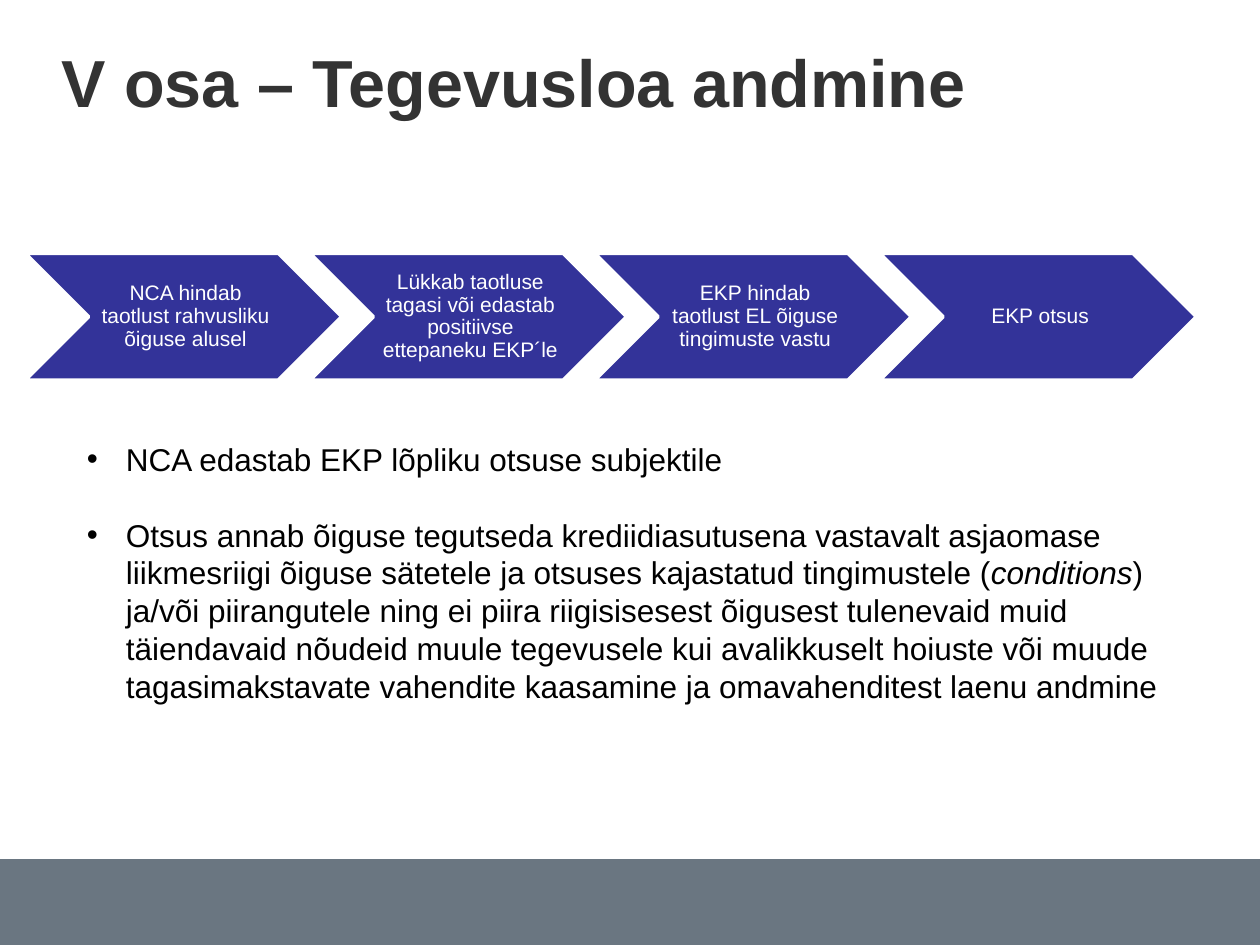
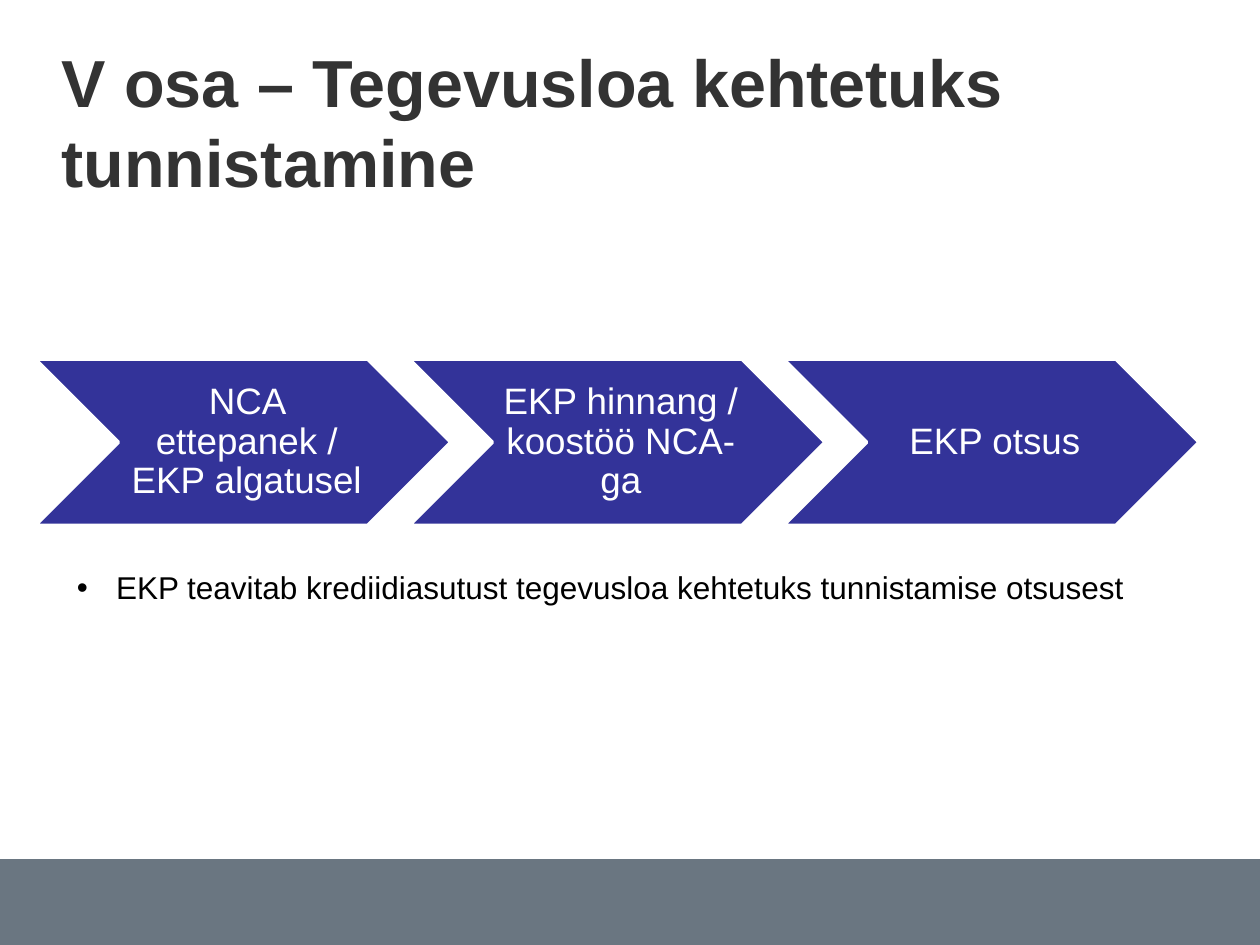
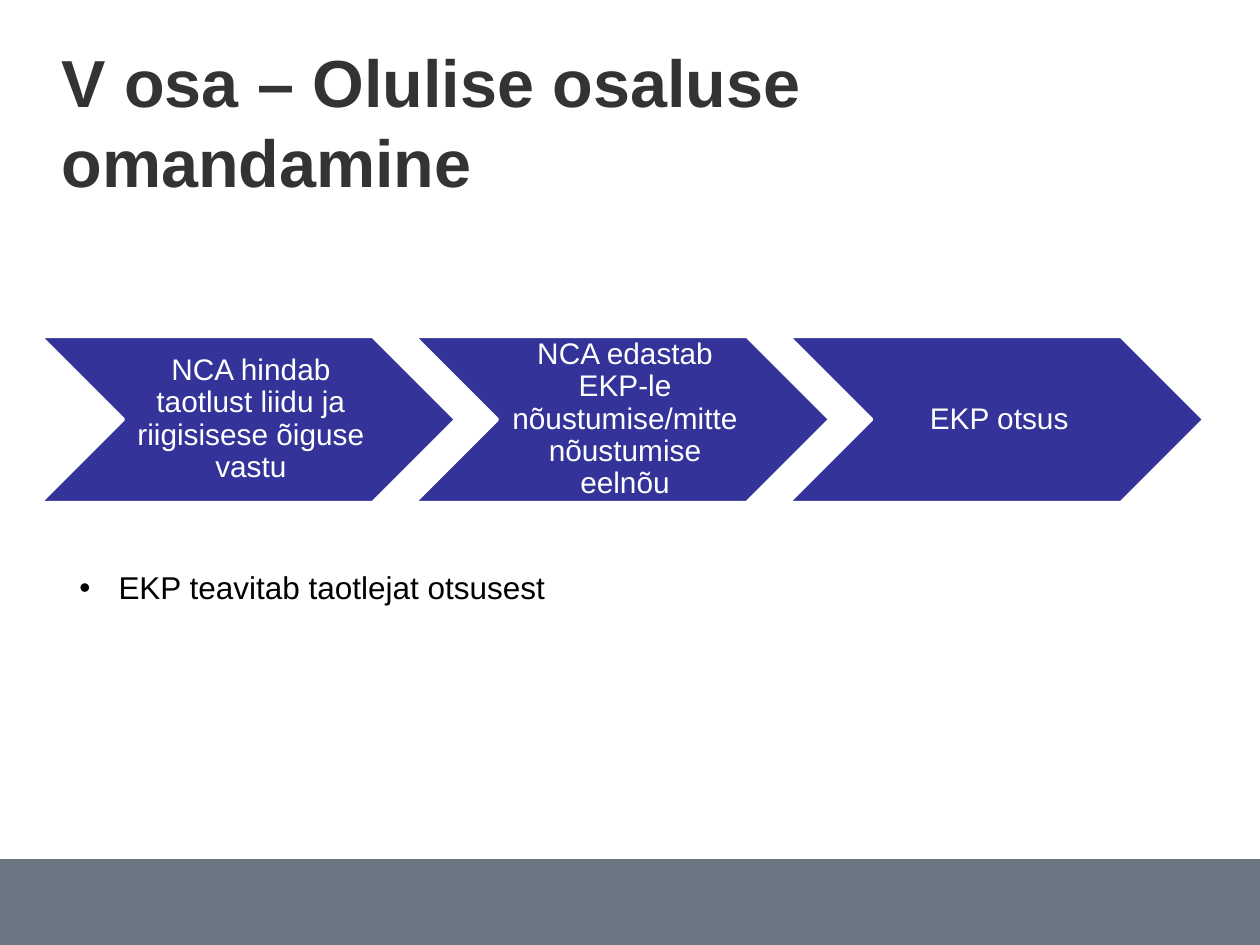
from pptx import Presentation
from pptx.dml.color import RGBColor
from pptx.enum.shapes import MSO_SHAPE
from pptx.enum.text import MSO_ANCHOR, PP_ALIGN
from pptx.oxml.ns import qn
from pptx.util import Cm, Pt
from lxml.etree import SubElement

SLIDE_WIDTH, SLIDE_HEIGHT = 25.4, 19.05
BAND_HEIGHT = 1.73


def color(hex_value):
    return RGBColor.from_string(hex_value)


def add_bullet(paragraph, indent=0.79):
    properties = paragraph._p.get_or_add_pPr()
    properties.set("marL", str(Cm(indent)))
    properties.set("indent", str(-Cm(indent)))
    SubElement(properties, qn("a:buFont"), typeface="Arial")
    SubElement(properties, qn("a:buChar"), char="•")


def write_text(frame, paragraphs, *, size, fill, font="Arial", bold=False,
               align=PP_ALIGN.LEFT, anchor=MSO_ANCHOR.TOP, line_spacing=None,
               gap=0, bullet=False):
    """Write one paragraph per string; parts between asterisks are italic."""
    frame.word_wrap = True
    frame.vertical_anchor = anchor
    for index, text in enumerate(paragraphs):
        paragraph = frame.add_paragraph() if index else frame.paragraphs[0]
        paragraph.alignment = align
        if line_spacing:
            paragraph.line_spacing = line_spacing
        if index and gap:
            paragraph.space_before = Pt(gap)
        if bullet:
            add_bullet(paragraph)
        for part, content in enumerate(text.split("*")):
            run = paragraph.add_run()
            run.text = content
            run.font.name = font
            run.font.size = Pt(size)
            run.font.bold = bold
            run.font.italic = part % 2 == 1
            run.font.color.rgb = color(fill)


class Deck:
    """Holds the shared style and the slide being built."""

    BAND = "6A7681"
    TITLE = "333333"
    STEP = "333399"
    BODY = "000000"
    WHITE = "FFFFFF"

    def __init__(self):
        self.presentation = Presentation()
        self.presentation.slide_width = Cm(SLIDE_WIDTH)
        self.presentation.slide_height = Cm(SLIDE_HEIGHT)
        self.slide = None

    def new_slide(self, title, title_lines=1):
        self.slide = self.presentation.slides.add_slide(
            self.presentation.slide_layouts[6])
        self.shape(MSO_SHAPE.RECTANGLE, 0, SLIDE_HEIGHT - BAND_HEIGHT,
                   SLIDE_WIDTH, BAND_HEIGHT, self.BAND)
        self.text_box([title], 0.99, 0.71, 23.5, 0.26 + 1.62 * title_lines,
                      size=38, fill=self.TITLE, bold=True)

    def shape(self, kind, left, top, width, height, fill, line=None):
        shape = self.slide.shapes.add_shape(
            kind, Cm(left), Cm(top), Cm(width), Cm(height))
        shape.shadow.inherit = False
        shape.fill.solid()
        shape.fill.fore_color.rgb = color(fill)
        if line:
            shape.line.color.rgb = color(line)
            shape.line.width = Pt(2)
        else:
            shape.line.fill.background()
        return shape

    def text_box(self, paragraphs, left, top, width, height, **text_format):
        box = self.slide.shapes.add_textbox(
            Cm(left), Cm(top), Cm(width), Cm(height))
        write_text(box.text_frame, paragraphs, **text_format)

    def bullets(self, paragraphs, left, top, width, height):
        self.text_box(paragraphs, left, top, width, height, size=18,
                      fill=self.BODY, bullet=True, gap=21.7)

    def process(self, steps, left, top, width, size):
        """Draw a row of chevrons, each overlapping the last by a tenth."""
        for index, step in enumerate(steps):
            chevron = self.shape(MSO_SHAPE.CHEVRON, left + index * 0.9 * width,
                                 top, width, 0.4 * width, self.STEP, self.WHITE)
            frame = chevron.text_frame
            frame.margin_left = Cm(size / 95)
            frame.margin_right = frame.margin_top = frame.margin_bottom = Cm(size / 285)
            write_text(frame, [step], size=size, fill=self.WHITE,
                       align=PP_ALIGN.CENTER, anchor=MSO_ANCHOR.MIDDLE,
                       line_spacing=0.9)


def main():
    deck = Deck()

    deck.new_slide("V osa – Tegevusloa andmine")
    deck.process(["NCA hindab taotlust rahvusliku õiguse alusel",
                  "Lükkab taotluse tagasi või edastab positiivse ettepaneku EKP´le",
                  "EKP hindab taotlust EL õiguse tingimuste vastu",
                  "EKP otsus"], 0.51, 5.11, 6.38, size=12)
    deck.bullets(["NCA edastab EKP lõpliku otsuse subjektile",
                  "Otsus annab õiguse tegutseda krediidiasutusena vastavalt asjaomase "
                  "liikmesriigi õiguse sätetele ja otsuses kajastatud tingimustele "
                  "(*conditions*) ja/või piirangutele ning ei piira riigisisesest "
                  "õigusest tulenevaid muid täiendavaid nõudeid muule tegevusele kui "
                  "avalikkuselt hoiuste või muude tagasimakstavate vahendite kaasamine "
                  "ja omavahenditest laenu andmine"], 1.5, 8.74, 22.81, 5.64)

    deck.new_slide("V osa – Tegevusloa kehtetuks tunnistamine", title_lines=2)
    deck.process(["NCA ettepanek / EKP algatusel",
                  "EKP hinnang / koostöö NCA-ga",
                  "EKP otsus"], 0.71, 7.24, 8.38, size=21)
    deck.bullets(["EKP teavitab krediidiasutust tegevusloa kehtetuks tunnistamise "
                  "otsusest"], 1.3, 11.33, 22, 1.02)

    deck.new_slide("V osa – Olulise osaluse omandamine", title_lines=2)
    deck.process(["NCA hindab taotlust liidu ja riigisisese õiguse vastu",
                  "NCA edastab EKP-le nõustumise/mitte nõustumise eelnõu",
                  "EKP otsus"], 0.81, 6.78, 8.38, size=17)
    deck.bullets(["EKP teavitab taotlejat otsusest"], 1.35, 11.33, 22.4, 1.02)

    deck.presentation.save("out.pptx")


if __name__ == "__main__":
    main()
